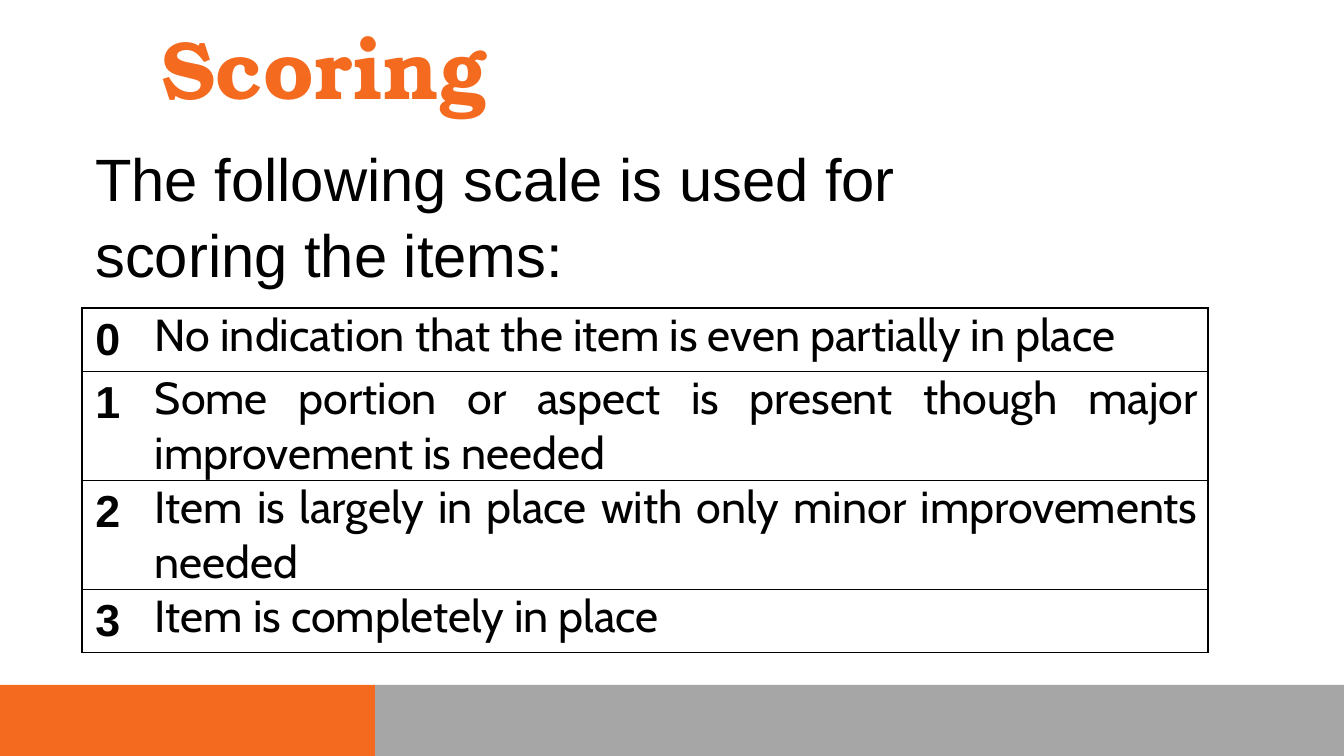
from lxml import etree
from pptx import Presentation
from pptx.dml.color import RGBColor
from pptx.enum.shapes import MSO_SHAPE
from pptx.enum.text import MSO_ANCHOR, PP_ALIGN
from pptx.oxml.ns import qn
from pptx.util import Pt

RECT = MSO_SHAPE.RECTANGLE
TOP = MSO_ANCHOR.TOP
LEFT, JUST = PP_ALIGN.LEFT, PP_ALIGN.JUSTIFY
PX = 914400 / 134.4
ORANGE, GRAY, BLACK = "F46A1F", "A6A6A6", "000000"


def px(*vals):
    """Turn pixel lengths into EMU."""
    return [round(v * PX) for v in vals]


def style(para, face, size, color, bold=False):
    for run in para.runs:
        run.font.name = face
        run.font.size = Pt(size)
        run.font.bold = bold
        run.font.color.rgb = RGBColor.from_string(color)


prs = Presentation()
prs.slide_width, prs.slide_height = px(1344, 756)
slide = prs.slides.add_slide(prs.slide_layouts[5])
shapes = slide.shapes
title = shapes.title

# Footer bars, behind the title
for left, width, color in [(374, 970, GRAY), (0, 375, ORANGE)]:
    bar = shapes.add_shape(RECT, *px(left, 685, width, 71))
    bar.shadow.inherit = False
    bar.fill.solid()
    bar.fill.fore_color.rgb = RGBColor.from_string(color)
    bar.line.fill.background()
    title._element.addprevious(bar._element)

title.left, title.top, title.width, title.height = px(148, 31, 1129, 126)
frame = title.text_frame
frame.text = "Scoring"
frame.vertical_anchor = TOP
para = frame.paragraphs[0]
para.alignment = LEFT
para.line_spacing = Pt(42)
style(para, "TeX Gyre Bonum", 44, ORANGE, True)

# Scale table
scale = [
    ("No indication that the item is even partially in place", 63),
    ("Some portion or aspect is present though major improvement is needed", 109),
    ("Item is largely in place with only minor improvements needed", 109),
    ("Item is completely in place", 63),
]
table = shapes.add_table(len(scale), 2, *px(82, 308, 1126, 344)).table
table.first_row = table.horz_banding = False
for col, width in zip(table.columns, px(63, 1063)):
    col.width = width

for i, (text, height) in enumerate(scale):
    table.rows[i].height = px(height)[0]
    score, label = table.cell(i, 0), table.cell(i, 1)
    score.text, label.text = str(i), text
    style(score.text_frame.paragraphs[0], "Arial", 24, BLACK, True)
    para = label.text_frame.paragraphs[0]
    para.alignment = JUST
    style(para, "Cabin", 24, BLACK)
    label.margin_left = label.margin_right = px(10)[0]
    label.margin_top = label.margin_bottom = 0
    for cell, inner in [(score, "lnR"), (label, "lnL")]:
        cell.fill.background()
        props = cell._tc.get_or_add_tcPr()
        for n, side in enumerate(["lnL", "lnR", "lnT", "lnB"]):
            line = etree.Element(qn("a:" + side), w=str(Pt(0.75)))
            props.insert(n, line)
            if side == inner:
                etree.SubElement(line, qn("a:noFill"))
            else:
                fill = etree.SubElement(line, qn("a:solidFill"))
                etree.SubElement(fill, qn("a:srgbClr"), val=BLACK)

intro = shapes.add_textbox(*px(82, 132, 1003, 159))
frame = intro.text_frame
frame.word_wrap = True
frame.text = "The following scale is used for scoring the items:"
para = frame.paragraphs[0]
para.line_spacing = 1.05
style(para, "Arial", 32, BLACK)

prs.save("out.pptx")
